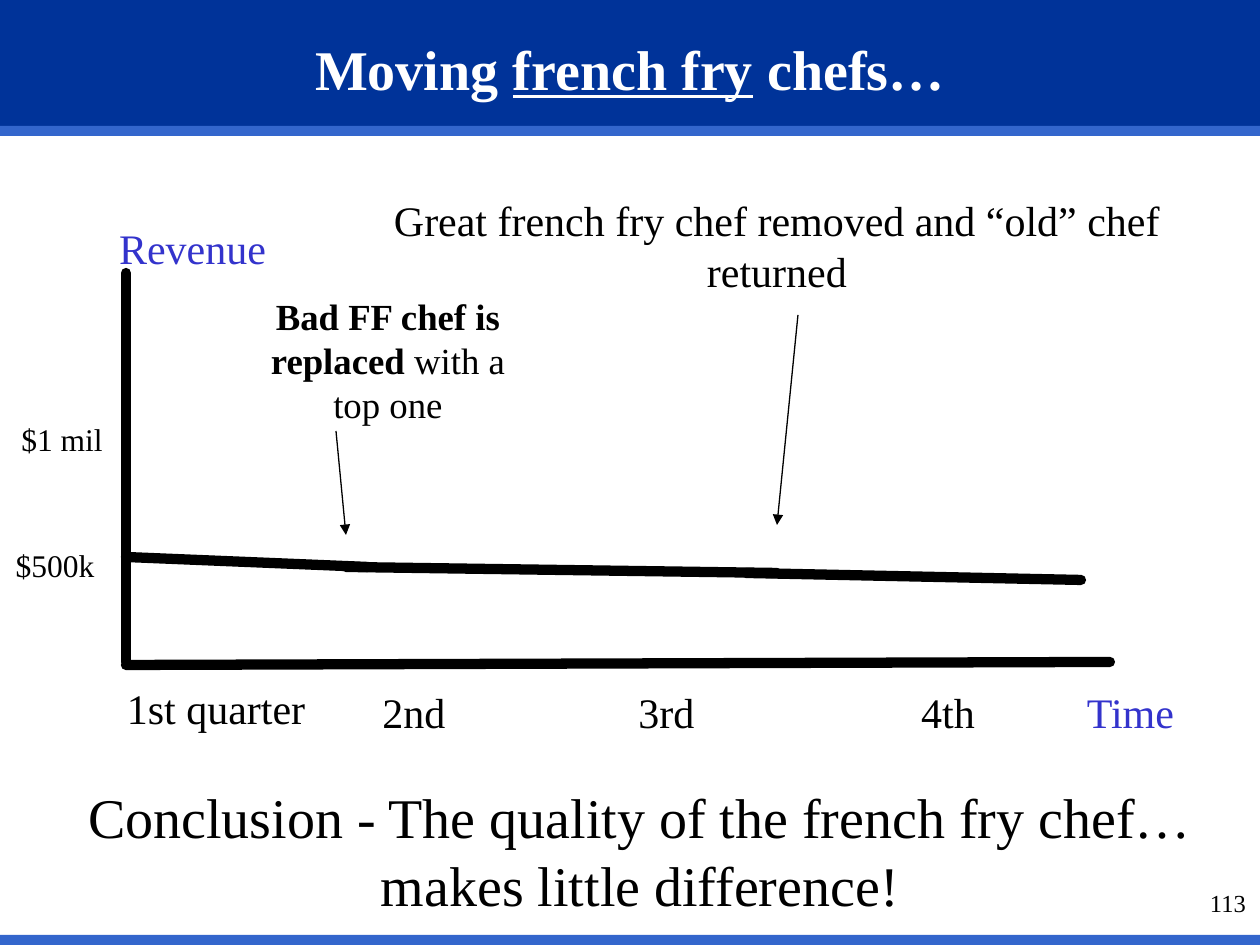
from lxml import etree
from pptx import Presentation
from pptx import util as u
from pptx.dml.color import RGBColor
from pptx.enum import shapes, text
from pptx.oxml.ns import qn

PX = u.Inches(1) // 126
WIDTH, HEIGHT = 1260, 945

THEME = {
    "font": "Times New Roman",
    "black": "000000", "white": "FFFFFF", "blue": "3333CC",
    "banner": "003399", "stripe": "3366CC",
    "heading": 32, "body": 24, "note": 21, "value": 18, "number": 14,
    "thick": 5.88, "thin": 0.75,
}

# Content: boxes are (left, top, width, height) in px
BANDS = [((0, 0, WIDTH, 126), "banner"),
         ((0, 126, WIDTH, 10), "stripe"),
         ((0, 935, WIDTH, 10), "stripe")]

TITLE_BOX = (0, 42, WIDTH, 53)
TITLE = [("Moving ", "b"), ("french fry", "bu"), (" chefs…", "b")]

# Labels without margins: text, box, size, colour
LABELS = [
    ("Revenue", (119, 223, 147, 50), "body", "blue"),
    ("$1 mil", (21, 420, 82, 38), "value", "black"),
    ("$500k", (15, 546, 80, 38), "value", "black"),
    ("1st quarter", (126, 683, 180, 50), "body", "black"),
    ("2nd", (382, 687, 64, 50), "body", "black"),
    ("3rd", (638, 687, 57, 50), "body", "black"),
    ("4th", (921, 687, 54, 50), "body", "black"),
    ("Time", (1084, 687, 93, 50), "body", "blue"),
]

# Wrapped text: runs, box, size, margins (horizontal, vertical)
PARAGRAPHS = [
    ([("Conclusion - The quality of the french fry chef… "
       "makes little difference!", "")], (21, 777, 1239, 147), "heading", (13, 6)),
    ([("Bad FF chef is replaced", "b"), (" with a top one", "")],
     (262, 294, 252, 134), "note", (0, 0)),
    ([("Great french fry chef removed and “old” chef returned", "")],
     (378, 189, 798, 115), "body", (13, 6)),
]

PAGE_NUMBER = ("113", (1197, 882, 63, 63))

# Lines: start x, start y, end x, end y
AXES = [(126, 273, 126, 662), (126, 665, 1110, 662)]
REVENUE = [(126, 557, 368, 567), (346, 567, 777, 573), (746, 573, 1081, 580)]
ARROWS = [(336, 431, 346, 535), (798, 315, 777, 525)]


def color(name):
    return RGBColor.from_string(THEME[name])


def scaled(box):
    return [value * PX for value in box]


def write(shape, runs, size, color_name, align=text.PP_ALIGN.CENTER,
          margins=(0, 0), wrap=True):
    """Fill a shape with one paragraph; run flags are b (bold), u (underline)."""
    frame = shape.text_frame
    frame.word_wrap = wrap
    frame.margin_left = frame.margin_right = margins[0] * PX
    frame.margin_top = frame.margin_bottom = margins[1] * PX
    paragraph = frame.paragraphs[0]
    paragraph.alignment = align
    for words, flags in runs:
        run = paragraph.add_run()
        run.text = words
        run.font.name = THEME["font"]
        run.font.size = u.Pt(THEME[size])
        run.font.color.rgb = color(color_name)
        run.font.bold = "b" in flags
        run.font.underline = "u" in flags


def add_line(slide, ends, weight, arrow=False):
    connector = slide.shapes.add_connector(
        shapes.MSO_CONNECTOR.STRAIGHT, *scaled(ends))
    connector.line.width = u.Pt(THEME[weight])
    connector.line.color.rgb = color("black")
    outline = connector.line._get_or_add_ln()
    if arrow:
        etree.SubElement(outline, qn("a:tailEnd"), type="triangle")
    else:
        outline.set("cap", "rnd")
    etree.SubElement(connector._element.spPr, qn("a:effectLst"))


def main():
    presentation = Presentation()
    presentation.slide_width = WIDTH * PX
    presentation.slide_height = HEIGHT * PX
    slide = presentation.slides.add_slide(presentation.slide_layouts[5])
    title = slide.shapes.title

    # Banner and stripes, with the title in front
    for box, fill in BANDS:
        band = slide.shapes.add_shape(shapes.MSO_SHAPE.RECTANGLE, *scaled(box))
        band.shadow.inherit = False
        band.fill.solid()
        band.fill.fore_color.rgb = color(fill)
        band.line.fill.background()
    slide.shapes._spTree.append(title._element)
    title.left, title.top, title.width, title.height = scaled(TITLE_BOX)
    title.text_frame.vertical_anchor = text.MSO_ANCHOR.MIDDLE
    title.text_frame.auto_size = text.MSO_AUTO_SIZE.NONE
    write(title, TITLE, "heading", "white")

    # Hand-drawn chart
    for ends in AXES + REVENUE:
        add_line(slide, ends, "thick")
    for ends in ARROWS:
        add_line(slide, ends, "thin", arrow=True)

    # Labels and explanations
    for words, box, size, color_name in LABELS:
        label = slide.shapes.add_textbox(*scaled(box))
        write(label, [(words, "")], size, color_name, wrap=False)
    for runs, box, size, margins in PARAGRAPHS:
        note = slide.shapes.add_textbox(*scaled(box))
        write(note, runs, size, "black", margins=margins)

    # Page number
    words, box = PAGE_NUMBER
    number = slide.shapes.add_textbox(*scaled(box))
    write(number, [(words, "")], "number", "black", text.PP_ALIGN.LEFT,
          margins=(13, 6), wrap=False)

    presentation.save("out.pptx")


if __name__ == "__main__":
    main()
